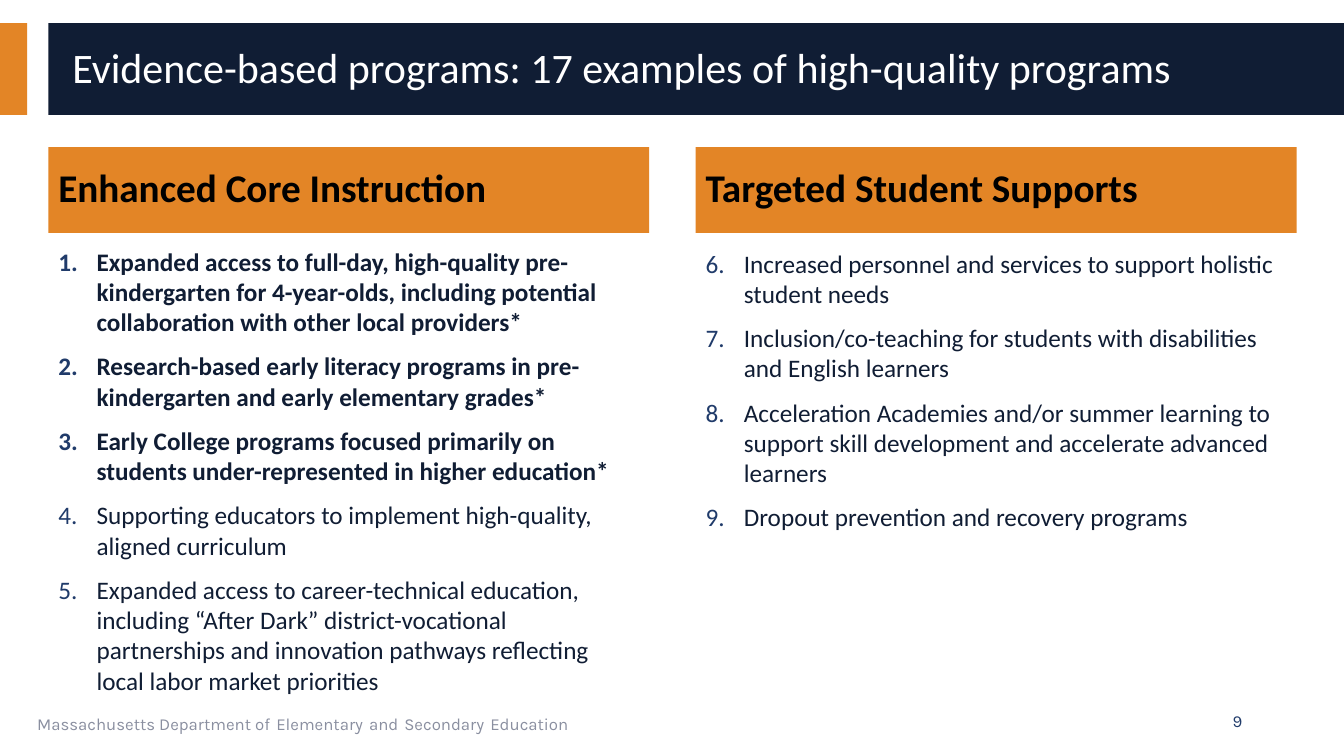
import pptx
import pptx.dml.color
import pptx.enum.shapes
import pptx.enum.text
import pptx.oxml
import pptx.util

PX = 9144  # EMU per px, 100 px to the inch
COLORS = {"orange": "E38526", "navy": "101D34", "blue": "203B6A",
          "gray": "8A8FA0", "white": "FFFFFF", "black": "000000"}
ANCHOR = pptx.enum.text.MSO_ANCHOR
ALIGN = pptx.enum.text.PP_ALIGN

TITLE = "Evidence-based programs: 17 examples of high-quality programs"
FOOTER = ["Massachusetts Department of", "Elementary", "and", "Secondary", "Education"]
CORE = [
    ("Expanded access to full-day, high-quality pre-kindergarten for 4-year-olds, "
     "including potential collaboration with other local providers*", True),
    ("Research-based early literacy programs in pre-kindergarten and early "
     "elementary grades*", True),
    ("Early College programs focused primarily on students under-represented in "
     "higher education*", True),
    ("Supporting educators to implement high-quality, aligned curriculum", False),
    ("Expanded access to career-technical education, including “After Dark” "
     "district-vocational partnerships and innovation pathways reflecting local "
     "labor market priorities", False),
]
SUPPORTS = [
    ("Increased personnel and services to support holistic student needs", False),
    ("Inclusion/co-teaching for students with disabilities and English learners", False),
    ("Acceleration Academies and/or summer learning to support skill development "
     "and accelerate advanced learners", False),
    ("Dropout prevention and recovery programs", False),
]


def rgb(name):
    return pptx.dml.color.RGBColor.from_string(COLORS[name])


def px(*lengths):
    return [n * PX for n in lengths]


def set_format(obj, values):
    for name, value in values.items():
        setattr(obj, name, value)


def add_run(p, text, size, color, font="Calibri", bold=False):
    r = p.add_run()
    r.text = text
    set_format(r.font, {"name": font, "size": pptx.util.Pt(size), "bold": bold})
    r.font.color.rgb = rgb(color)


def add_bar(s, box, color):
    sp = s.shapes.add_shape(pptx.enum.shapes.MSO_SHAPE.RECTANGLE, *px(*box))
    sp.shadow.inherit = False
    sp.fill.solid()
    sp.fill.fore_color.rgb = rgb(color)
    sp.line.fill.background()
    return sp


def set_frame(sp, anchor):
    """Set wrapping and anchor, and return the text frame."""
    tf = sp.text_frame
    set_format(tf, {"word_wrap": True, "vertical_anchor": anchor})
    return tf


def add_box(s, box, anchor=ANCHOR.TOP):
    return set_frame(s.shapes.add_textbox(*px(*box)), anchor)


def add_number(p, start):
    """Give the paragraph a hanging, blue automatic number."""
    pPr = p._p.get_or_add_pPr()
    pPr.set("marL", str(38 * PX))
    pPr.set("indent", str(-38 * PX))
    ns = 'xmlns:a="http://schemas.openxmlformats.org/drawingml/2006/main"'
    for xml in (f'<a:buClr {ns}><a:srgbClr val="{COLORS["blue"]}"/></a:buClr>',
                f'<a:buFont {ns} typeface="+mj-lt"/>',
                f'<a:buAutoNum {ns} type="arabicPeriod" startAt="{start}"/>'):
        pPr.append(pptx.oxml.parse_xml(xml))


def add_column(s, left, top, heading, items, start):
    """Add an orange heading bar with a numbered list that begins at top."""
    tf = set_frame(add_bar(s, (left, 146, 596, 85), "orange"), ANCHOR.MIDDLE)
    p = tf.paragraphs[0]
    set_format(p, {"alignment": ALIGN.LEFT, "line_spacing": 0.9})
    add_run(p, heading, 28, "black", bold=True)

    tf = add_box(s, (left, top, 596, 415))
    for i, (text, bold) in enumerate(items):
        p = tf.add_paragraph() if i else tf.paragraphs[0]
        add_number(p, start)
        if i:
            p.space_before = pptx.util.Pt(10)
        add_run(p, text, 18, "navy", bold=bold)


def add_title(s):
    p = add_box(s, (62, 32, 1250, 74), ANCHOR.MIDDLE).paragraphs[0]
    p.line_spacing = 0.9
    add_run(p, TITLE, 30, "white")


def add_footer(s):
    p = add_box(s, (27, 695, 844, 40)).paragraphs[0]
    for i, words in enumerate(FOOTER):
        if i:
            add_run(p, " ", 18, "blue", "Karla")
        add_run(p, words, 12, "gray", "Karla")

    p = add_box(s, (942, 695, 300, 40), ANCHOR.MIDDLE).paragraphs[0]
    p.alignment = ALIGN.RIGHT
    add_run(p, "9", 12, "blue", "Karla")


def main():
    prs = pptx.Presentation()
    prs.slide_width, prs.slide_height = px(1333, 750)
    s = prs.slides.add_slide(prs.slide_layouts[6])
    add_bar(s, (0, 23, 27, 91), "orange")
    add_bar(s, (48, 23, 1285, 91), "navy")
    add_title(s)
    add_column(s, 48, 239, "Enhanced Core Instruction", CORE, 1)
    add_column(s, 690, 241, "Targeted Student Supports", SUPPORTS, len(CORE) + 1)
    add_footer(s)
    prs.save("out.pptx")


if __name__ == "__main__":
    main()
